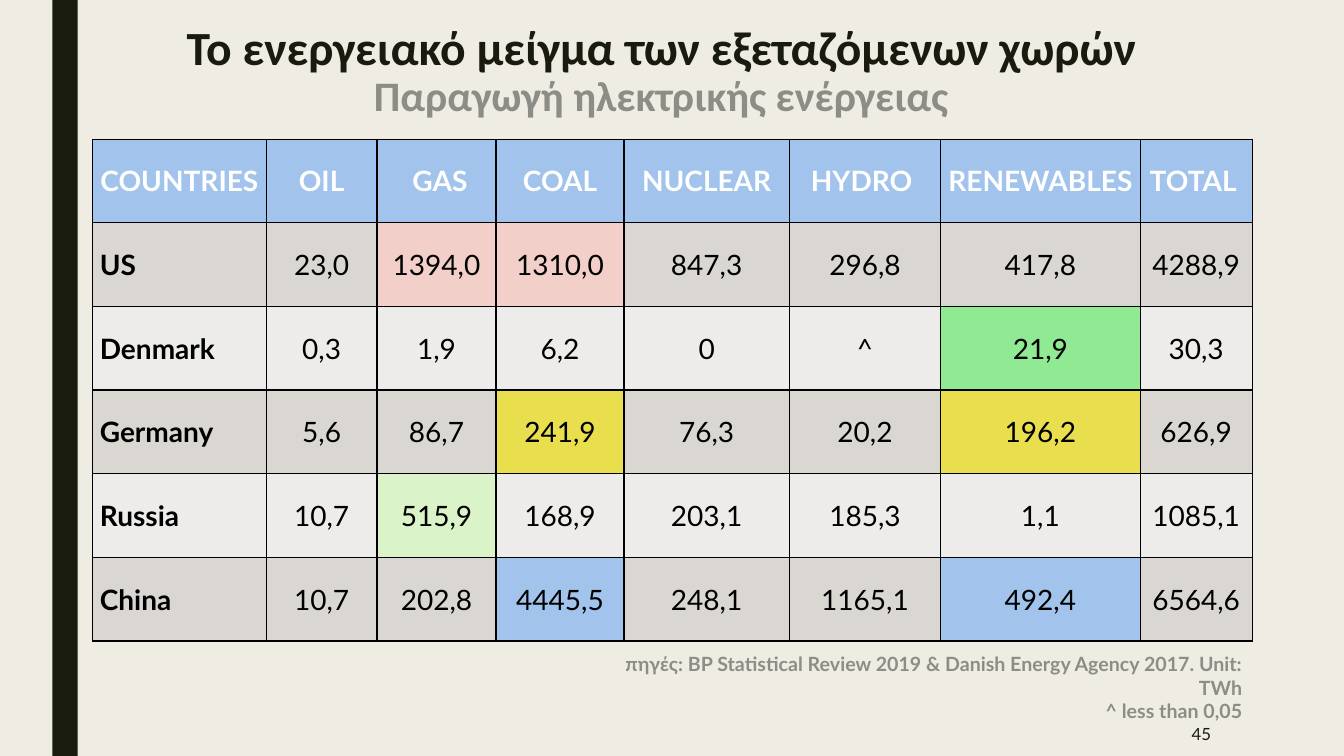
from lxml.etree import SubElement
from pptx import Presentation
from pptx.dml.color import RGBColor
from pptx.enum.shapes import MSO_SHAPE
from pptx.enum.text import MSO_ANCHOR, PP_ALIGN
from pptx.oxml.ns import qn
from pptx.util import Inches, Pt

CREAM = RGBColor(0xEF, 0xED, 0xE3)
DARK = RGBColor(0x19, 0x1B, 0x0E)
GREY = RGBColor(0x8C, 0x8D, 0x86)
WHITE = RGBColor(0xFF, 0xFF, 0xFF)
BLACK = RGBColor(0x00, 0x00, 0x00)
BLUE = RGBColor(0xA1, 0xC3, 0xEC)
BAND_DARK = RGBColor(0xDA, 0xD7, 0xD2)
BAND_LIGHT = RGBColor(0xED, 0xEC, 0xEA)
PINK = RGBColor(0xF3, 0xCF, 0xCA)
GREEN = RGBColor(0x90, 0xEA, 0x93)
YELLOW = RGBColor(0xE9, 0xDF, 0x4E)
PALE_GREEN = RGBColor(0xDA, 0xF3, 0xC9)

COLUMN_WIDTHS = [1.72, 1.1, 1.18, 1.27, 1.64, 1.5, 1.98, 1.11]
ROW_HEIGHT = 0.83
GENERATION = [
    ["COUNTRIES", "OIL", " GAS", "COAL", "NUCLEAR", "HYDRO ", "RENEWABLES", "TOTAL "],
    ["US", "23,0", "1394,0", "1310,0", "847,3", "296,8", "417,8", "4288,9"],
    ["Denmark", "0,3", "1,9", "6,2", "0", "^", "21,9", "30,3"],
    ["Germany", "5,6", "86,7", "241,9", "76,3", "20,2", "196,2", "626,9"],
    ["Russia", "10,7", "515,9", "168,9", "203,1", "185,3", "1,1", "1085,1"],
    ["China", "10,7", "202,8", "4445,5", "248,1", "1165,1", "492,4", "6564,6"],
]
HIGHLIGHTS = {
    (1, 2): PINK, (1, 3): PINK,
    (2, 6): GREEN,
    (3, 3): YELLOW, (3, 6): YELLOW,
    (4, 2): PALE_GREEN,
    (5, 3): BLUE, (5, 6): BLUE,
}


class SlideBuilder:
    def __init__(self, slide, font):
        self.slide = slide
        self.font = font

    def background(self, color):
        fill = self.slide.background.fill
        fill.solid()
        fill.fore_color.rgb = color

    def bar(self, x, y, w, h, color):
        sp = self.slide.shapes.add_shape(
            MSO_SHAPE.RECTANGLE, Inches(x), Inches(y), Inches(w), Inches(h))
        sp.shadow.inherit = False
        sp.fill.solid()
        sp.fill.fore_color.rgb = color
        sp.line.fill.background()

    def run(self, p, text, size, color, bold=False, font=None):
        r = p.add_run()
        r.text = text
        r.font.name = font or self.font
        r.font.size = Pt(size)
        r.font.bold = bold
        r.font.color.rgb = color

    def text(self, x, y, w, h, lines, align, anchor=MSO_ANCHOR.MIDDLE,
             bold=False, font=None, spacing=None):
        sp = self.slide.shapes.add_textbox(Inches(x), Inches(y), Inches(w), Inches(h))
        tf = sp.text_frame
        tf.word_wrap = True
        tf.vertical_anchor = anchor
        for i, (text, size, color, right_margin) in enumerate(lines):
            p = tf.add_paragraph() if i else tf.paragraphs[0]
            p.alignment = align
            if spacing:
                p.line_spacing = spacing
            if right_margin:
                p._p.get_or_add_pPr().set("marR", str(Inches(right_margin)))
            self.run(p, text, size, color, bold, font)

    def borders(self, cell, color, width):
        tc_pr = cell._tc.get_or_add_tcPr()
        for side in ("lnL", "lnR", "lnT", "lnB"):
            ln = SubElement(tc_pr, qn(f"a:{side}"), w=str(Pt(width)))
            fill = SubElement(ln, qn("a:solidFill"))
            SubElement(fill, qn("a:srgbClr"), val=str(color))

    def cell(self, cell, text, fill, color, bold, align):
        self.borders(cell, BLACK, 1)
        cell.fill.solid()
        cell.fill.fore_color.rgb = fill
        cell.margin_left = cell.margin_right = Inches(0.07)
        cell.margin_top = cell.margin_bottom = 0
        cell.vertical_anchor = MSO_ANCHOR.MIDDLE
        p = cell.text_frame.paragraphs[0]
        p.alignment = align
        self.run(p, text, 20, color, bold)

    def table(self, x, y, rows, widths, row_height, highlights):
        table = self.slide.shapes.add_table(
            len(rows), len(widths), Inches(x), Inches(y),
            Inches(sum(widths)), Inches(row_height * len(rows))).table
        for column, width in zip(table.columns, widths):
            column.width = Inches(width)
        for i, row in enumerate(rows):
            table.rows[i].height = Inches(row_height)
            header = i == 0
            band = BLUE if header else BAND_DARK if i % 2 else BAND_LIGHT
            for j, text in enumerate(row):
                country = j == 0 and not header
                self.cell(table.cell(i, j), text, highlights.get((i, j), band),
                          WHITE if header else BLACK, header or country,
                          PP_ALIGN.LEFT if country else PP_ALIGN.CENTER)


def main():
    prs = Presentation()
    prs.slide_width = Inches(13.33)
    prs.slide_height = Inches(7.5)
    s = SlideBuilder(prs.slides.add_slide(prs.slide_layouts[6]), "Lato")
    s.background(CREAM)
    s.bar(0.52, 0, 0.25, 7.5, DARK)
    s.text(0.92, 0.19, 11.5, 1.07, [
        ("Το ενεργειακό μείγμα των εξεταζόμενων χωρών", 34, DARK, 0.22),
        ("Παραγωγή ηλεκτρικής ενέργειας", 30, GREY, 0),
    ], PP_ALIGN.CENTER, bold=True, font="Calibri", spacing=0.89)
    s.table(0.92, 1.38, GENERATION, COLUMN_WIDTHS, ROW_HEIGHT, HIGHLIGHTS)
    s.text(10.36, 7.06, 1.75, 0.44, [("45", 12, DARK, 0)], PP_ALIGN.RIGHT)
    s.text(5.82, 6.42, 6.6, 0.57, [
        ("πηγές: BP Statistical Review 2019 & Danish Energy Agency 2017. Unit: TWh",
         14, GREY, 0),
        ("^ less than 0,05", 14, GREY, 0),
    ], PP_ALIGN.RIGHT, anchor=MSO_ANCHOR.TOP, bold=True)
    prs.save("out.pptx")


if __name__ == "__main__":
    main()
